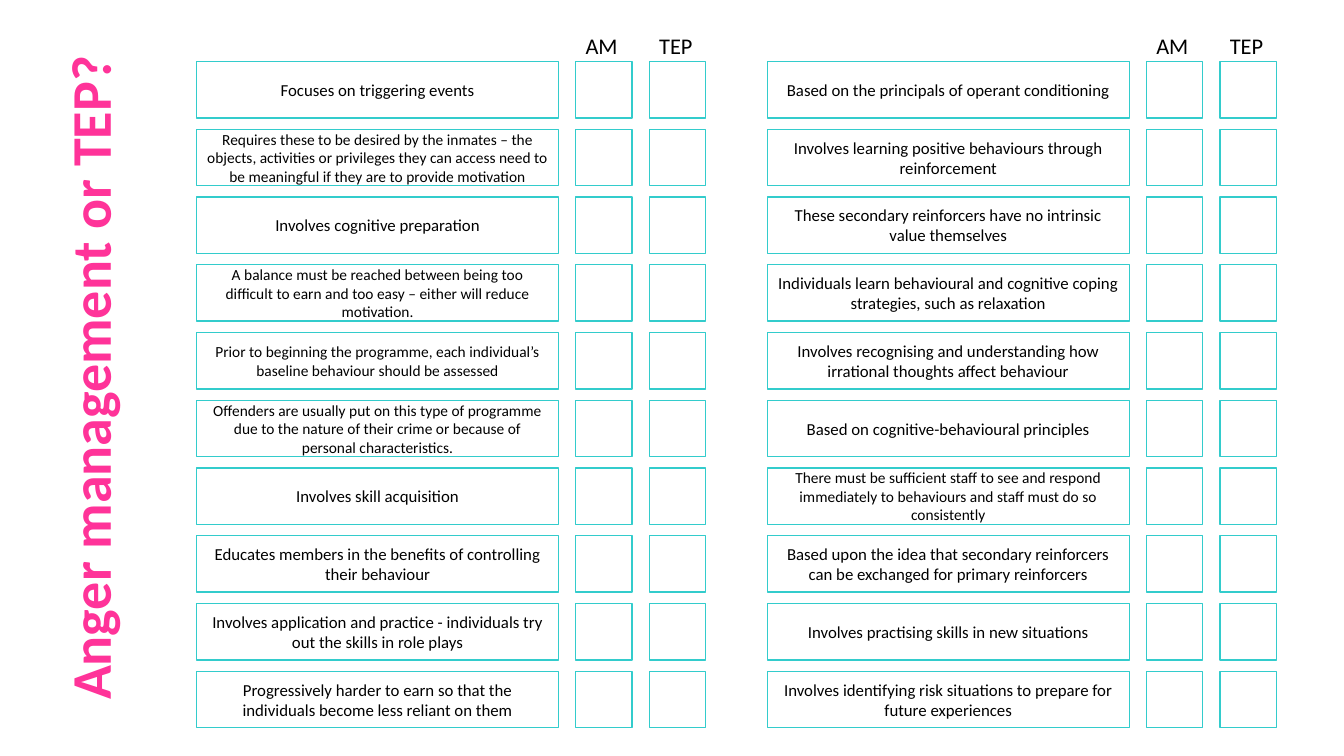
import pptx
import pptx.util
import pptx.dml.color
import pptx.enum.shapes
import pptx.enum.text

PINK = pptx.dml.color.RGBColor(0xFF, 0x33, 0x99)
TURQUOISE = pptx.dml.color.RGBColor(0x33, 0xCC, 0xCC)
BLACK = pptx.dml.color.RGBColor(0, 0, 0)
WHITE = pptx.dml.color.RGBColor(0xFF, 0xFF, 0xFF)

SLIDE_WIDTH, SLIDE_HEIGHT = 13.33, 7.5
FONT = "Calibri"
NORMAL, SMALL = 12, 11

# Grid in inches: two halves, each with a statement and two tick boxes per row
HALF_LEFTS = (1.95, 7.61)
FIRST_ROW, LAST_ROW = 0.61, 6.66
STATEMENT_WIDTH, BOX_SIZE = 3.59, 0.56
TICK_COLUMNS = {"AM": 3.76, "TEP": 4.49}
HEADING_TOP, HEADING_HEIGHT = 0.27, 0.37
TITLE_CENTRE, TITLE_HEIGHT = 0.88, 0.77

LEFT_STATEMENTS = [
    ("Focuses on triggering events", NORMAL),
    ("Requires these to be desired by the inmates – the objects, activities or "
     "privileges they can access need to be meaningful if they are to provide "
     "motivation", SMALL),
    ("Involves cognitive preparation", NORMAL),
    ("A balance must be reached between being too difficult to earn and too easy "
     "– either will reduce motivation.", SMALL),
    ("Prior to beginning the programme, each individual’s baseline behaviour "
     "should be assessed", SMALL),
    ("Offenders are usually put on this type of programme due to the nature of "
     "their crime or because of personal characteristics.", SMALL),
    ("Involves skill acquisition", NORMAL),
    ("Educates members in the benefits of controlling their behaviour", NORMAL),
    ("Involves application and practice - individuals try out the skills in role "
     "plays", NORMAL),
    ("Progressively harder to earn so that the individuals become less reliant on "
     "them", NORMAL),
]
RIGHT_STATEMENTS = [
    ("Based on the principals of operant conditioning", NORMAL),
    ("Involves learning positive behaviours through reinforcement", NORMAL),
    ("These secondary reinforcers have no intrinsic value themselves", NORMAL),
    ("Individuals learn behavioural and cognitive coping strategies, such as "
     "relaxation", NORMAL),
    ("Involves recognising and understanding how irrational thoughts affect "
     "behaviour", NORMAL),
    ("Based on cognitive-behavioural principles", NORMAL),
    ("There must be sufficient staff to see and respond immediately to behaviours "
     "and staff must do so consistently", SMALL),
    ("Based upon the idea that secondary reinforcers can be exchanged for primary "
     "reinforcers", NORMAL),
    ("Involves practising skills in new situations", NORMAL),
    ("Involves identifying risk situations to prepare for future experiences", NORMAL),
]


def inches(*lengths):
    return [pptx.util.Inches(length) for length in lengths]


def write_text(shape, text, size=NORMAL, color=BLACK, bold=False,
               align=pptx.enum.text.PP_ALIGN.CENTER,
               anchor=pptx.enum.text.MSO_ANCHOR.MIDDLE):
    frame = shape.text_frame
    frame.word_wrap = True
    frame.auto_size = pptx.enum.text.MSO_AUTO_SIZE.NONE
    frame.vertical_anchor = anchor
    paragraph = frame.paragraphs[0]
    paragraph.alignment = align
    run = paragraph.add_run()
    run.text = text
    run.font.name = FONT
    run.font.size = pptx.util.Pt(size)
    run.font.bold = bold
    run.font.color.rgb = color


def add_box(slide, left, top, width):
    box = slide.shapes.add_shape(pptx.enum.shapes.MSO_SHAPE.RECTANGLE,
                                 *inches(left, top, width, BOX_SIZE))
    box.shadow.inherit = False
    box.fill.solid()
    box.fill.fore_color.rgb = WHITE
    box.line.color.rgb = TURQUOISE
    box.line.width = pptx.util.Pt(1)
    return box


def add_heading(slide, text, left):
    heading = slide.shapes.add_textbox(
        *inches(left, HEADING_TOP, BOX_SIZE, HEADING_HEIGHT))
    write_text(heading, text, size=16, align=pptx.enum.text.PP_ALIGN.LEFT,
               anchor=pptx.enum.text.MSO_ANCHOR.TOP)


def add_half(slide, left, statements):
    """Add one checklist: headings above rows of a statement and its tick boxes."""
    row_step = (LAST_ROW - FIRST_ROW) / (len(statements) - 1)
    for row, (text, size) in enumerate(statements):
        top = FIRST_ROW + row * row_step
        write_text(add_box(slide, left, top, STATEMENT_WIDTH), text, size=size)
        for offset in TICK_COLUMNS.values():
            add_box(slide, left + offset, top, BOX_SIZE)
    for name, offset in TICK_COLUMNS.items():
        add_heading(slide, name, left + offset)


def place_title(slide, text):
    """Turn the title upwards so that it runs the full height of the slide."""
    title = slide.shapes.title
    title.left, title.top, title.width, title.height = inches(
        TITLE_CENTRE - SLIDE_HEIGHT / 2, (SLIDE_HEIGHT - TITLE_HEIGHT) / 2,
        SLIDE_HEIGHT, TITLE_HEIGHT)
    title.rotation = 270
    write_text(title, text, size=40, color=PINK, bold=True,
               anchor=pptx.enum.text.MSO_ANCHOR.TOP)


def main():
    presentation = pptx.Presentation()
    presentation.slide_width, presentation.slide_height = inches(
        SLIDE_WIDTH, SLIDE_HEIGHT)
    title_only = presentation.slide_layouts.get_by_name("Title Only")
    slide = presentation.slides.add_slide(title_only)
    place_title(slide, "Anger management or TEP?")
    for left, statements in zip(HALF_LEFTS, (LEFT_STATEMENTS, RIGHT_STATEMENTS)):
        add_half(slide, left, statements)
    presentation.save("out.pptx")


if __name__ == "__main__":
    main()
